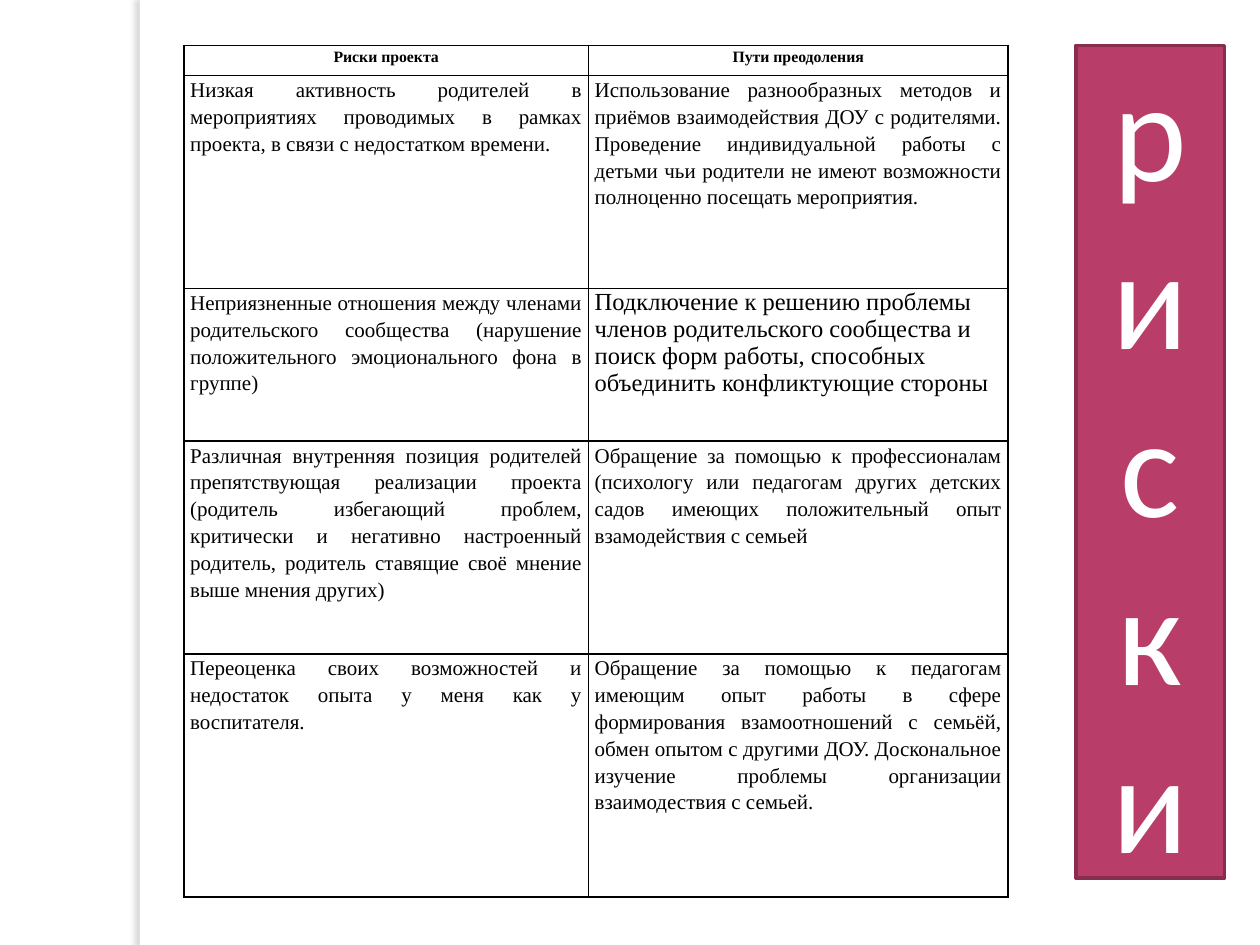
from lxml.etree import SubElement
from pptx import Presentation
from pptx.dml.color import RGBColor
from pptx.enum.shapes import MSO_SHAPE
from pptx.enum.text import MSO_ANCHOR, PP_ALIGN
from pptx.oxml import parse_xml
from pptx.oxml.ns import nsdecls, qn
from pptx.util import Inches, Pt

BLACK = RGBColor(0x00, 0x00, 0x00)
WHITE = RGBColor(0xFF, 0xFF, 0xFF)
RASPBERRY = RGBColor(0xB8, 0x3D, 0x68)
DARK_RASPBERRY = RGBColor(0x88, 0x2D, 0x4D)
SHADOW_GREY = RGBColor(0x7A, 0x72, 0x76)

TITLE = "риски"
HEADER = ("Риски проекта", "Пути преодоления")
RISKS = [
    ("Низкая активность родителей в мероприятиях проводимых в рамках проекта, в связи с недостатком времени.",
     "Использование разнообразных методов и приёмов взаимодействия ДОУ с родителями. Проведение индивидуальной "
     "работы с детьми чьи родители не имеют возможности полноценно посещать мероприятия."),
    ("Неприязненные отношения между членами родительского сообщества (нарушение положительного эмоционального "
     "фона в группе)",
     "Подключение к решению проблемы членов родительского сообщества и поиск форм работы, способных объединить "
     "конфликтующие стороны"),
    ("Различная внутренняя позиция родителей препятствующая реализации проекта (родитель избегающий проблем, "
     "критически и негативно настроенный родитель, родитель ставящие своё мнение выше мнения других)",
     "Обращение за помощью к профессионалам (психологу или педагогам других детских садов имеющих положительный "
     "опыт взамодействия с семьей"),
    ("Переоценка своих возможностей и недостаток опыта у меня как у воспитателя.",
     "Обращение за помощью к педагогам имеющим опыт работы в сфере формирования взамоотношений с семьёй, обмен "
     "опытом с другими ДОУ. Доскональное изучение проблемы организации взаимодествия с семьей."),
]
COLUMN_WIDTHS = (3.21, 3.33)
ROW_HEIGHTS = (0.24, 1.69, 1.21, 1.69, 1.93)

HEADER_FORMAT = dict(size=9, bold=True, align=PP_ALIGN.CENTER, line_spacing=1.15)
BODY_FORMAT = dict(size=12, align=PP_ALIGN.JUSTIFY, line_spacing=1.15)
LARGE_FORMAT = dict(size=14, align=PP_ALIGN.LEFT)
LARGE_CELL = (2, 1)


def write_text(frame, text, size, font="Times New Roman", color=BLACK, bold=False,
               align=PP_ALIGN.LEFT, line_spacing=1.0):
    paragraph = frame.paragraphs[0]
    paragraph.alignment = align
    paragraph.line_spacing = line_spacing
    run = paragraph.add_run()
    run.text = text
    run.font.size = Pt(size)
    run.font.name = font
    run.font.bold = bold
    run.font.color.rgb = color


def add_rectangle(slide, left, top, width, height, fill):
    shape = slide.shapes.add_shape(
        MSO_SHAPE.RECTANGLE, Inches(left), Inches(top), Inches(width), Inches(height))
    shape.shadow.inherit = False
    shape.fill.solid()
    shape.fill.fore_color.rgb = fill
    return shape


def add_left_shadow(shape):
    effects = shape._element.spPr.find(qn("a:effectLst"))
    effects.append(parse_xml(
        f'<a:outerShdw {nsdecls("a")} blurRad="{Pt(3)}" dist="{Pt(3)}" dir="10800000" rotWithShape="0">'
        f'<a:srgbClr val="{SHADOW_GREY}"><a:alpha val="25000"/></a:srgbClr></a:outerShdw>'))


def set_borders(cell):
    properties = cell._tc.get_or_add_tcPr()
    for side in ("lnL", "lnR", "lnT", "lnB"):
        line = SubElement(properties, qn(f"a:{side}"), w=str(Pt(1)))
        fill = SubElement(line, qn("a:solidFill"))
        SubElement(fill, qn("a:srgbClr"), val=str(BLACK))


def add_risk_table(slide):
    rows = [HEADER, *RISKS]
    table = slide.shapes.add_table(
        len(rows), len(HEADER), Inches(1.46), Inches(0.36),
        Inches(sum(COLUMN_WIDTHS)), Inches(sum(ROW_HEIGHTS))).table
    table.first_row = False
    table.horz_banding = False
    for column, width in zip(table.columns, COLUMN_WIDTHS):
        column.width = Inches(width)
    for row, height in zip(table.rows, ROW_HEIGHTS):
        row.height = Inches(height)
    for row_index, texts in enumerate(rows):
        for column_index, text in enumerate(texts):
            cell = table.cell(row_index, column_index)
            cell.margin_left = cell.margin_right = Inches(0.05)
            cell.margin_top = cell.margin_bottom = 0
            set_borders(cell)
            cell.fill.background()
            if row_index == 0:
                text_format = HEADER_FORMAT
            elif (row_index, column_index) == LARGE_CELL:
                text_format = LARGE_FORMAT
            else:
                text_format = BODY_FORMAT
            write_text(cell.text_frame, text, **text_format)


def add_title_banner(slide):
    banner = add_rectangle(slide, 8.54, 0.36, 1.18, 6.61, RASPBERRY)
    banner.line.color.rgb = DARK_RASPBERRY
    banner.line.width = Pt(2)
    frame = banner.text_frame
    frame.word_wrap = True
    frame.vertical_anchor = MSO_ANCHOR.MIDDLE
    write_text(frame, TITLE, size=80, font="Calibri", color=WHITE, align=PP_ALIGN.CENTER)


def main():
    presentation = Presentation()
    presentation.slide_width = Inches(10)
    presentation.slide_height = Inches(7.5)
    slide = presentation.slides.add_slide(presentation.slide_layouts[6])
    edge = add_rectangle(slide, 1.11, 0, 0.08, 7.5, WHITE)
    edge.line.fill.background()
    add_left_shadow(edge)
    add_risk_table(slide)
    add_title_banner(slide)
    presentation.save("out.pptx")


if __name__ == "__main__":
    main()
